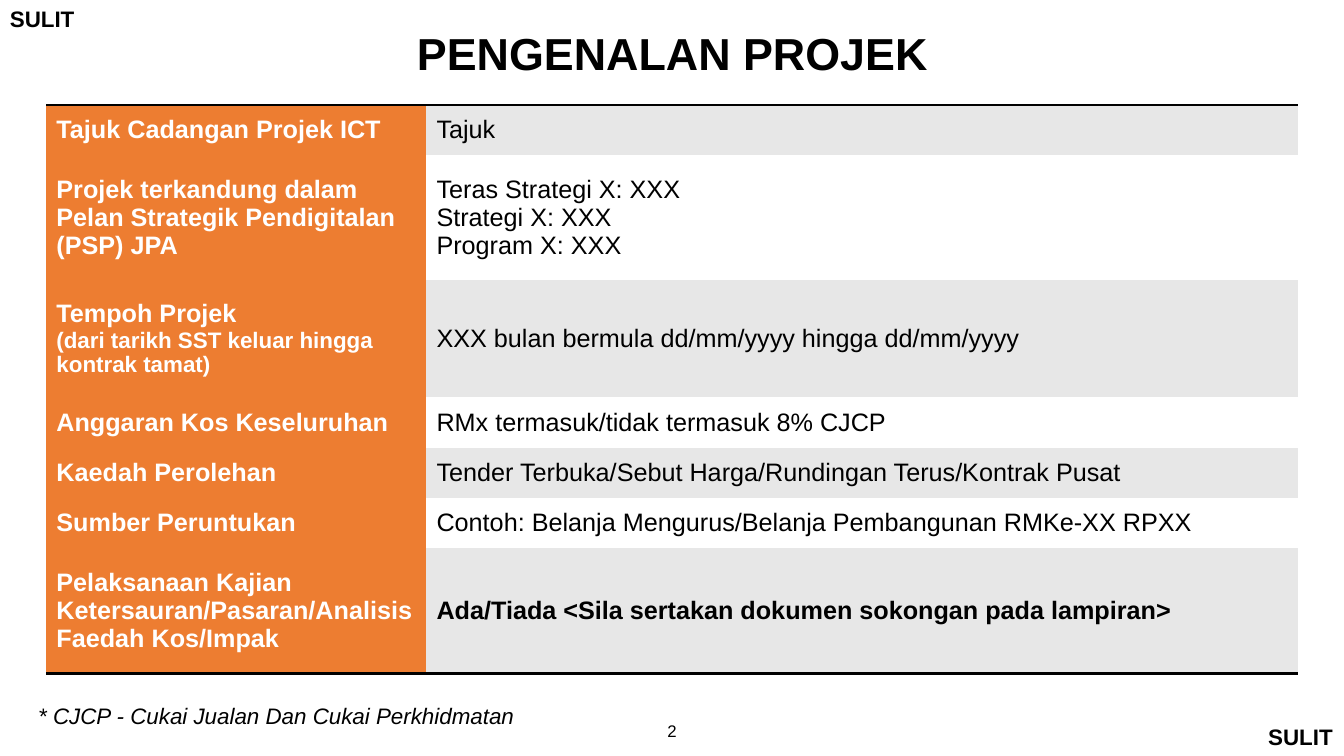
from lxml import etree
from pptx import Presentation
from pptx import util as u
from pptx.dml.color import RGBColor
from pptx.enum import text
from pptx.oxml import ns

BLACK = RGBColor(0x00, 0x00, 0x00)
WHITE = RGBColor(0xFF, 0xFF, 0xFF)
ORANGE = RGBColor(0xED, 0x7D, 0x31)
GREY = RGBColor(0xE7, 0xE7, 0xE7)
LEFT, CENTER, JUSTIFY = text.PP_ALIGN.LEFT, text.PP_ALIGN.CENTER, text.PP_ALIGN.JUSTIFY

COLS = [377, 864]
# Height, label lines, value lines
ROWS = [
    (50, ["Tajuk Cadangan Projek ICT"], ["Tajuk"]),
    (124, ["Projek terkandung dalam Pelan Strategik Pendigitalan (PSP) JPA"],
     ["Teras Strategi X: XXX", "Strategi X: XXX", "Program X: XXX"]),
    (116, ["Tempoh Projek", "(dari tarikh SST keluar hingga kontrak tamat)"],
     ["XXX bulan bermula dd/mm/yyyy hingga dd/mm/yyyy"]),
    (50, ["Anggaran Kos Keseluruhan"], ["RMx termasuk/tidak termasuk 8% CJCP"]),
    (50, ["Kaedah Perolehan"],
     ["Tender Terbuka/Sebut Harga/Rundingan Terus/Kontrak Pusat"]),
    (50, ["Sumber Peruntukan"],
     ["Contoh: Belanja Mengurus/Belanja Pembangunan RMKe-XX RPXX"]),
    (124, ["Pelaksanaan Kajian Ketersauran/Pasaran/Analisis Faedah Kos/Impak"],
     ["Ada/Tiada <Sila sertakan dokumen sokongan pada lampiran>"]),
]


class Deck:
    font = "Arial"
    scale = 9144  # EMU per px, 100 px to the inch

    def __init__(self, width, height):
        self.prs = Presentation()
        self.prs.slide_width, self.prs.slide_height = self.px(width), self.px(height)
        self.s = self.prs.slides.add_slide(self.prs.slide_layouts[6])

    def px(self, n):
        return u.Emu(n * self.scale)

    def style(self, p, size, color=BLACK, bold=False, italic=False, align=LEFT):
        p.alignment = align
        for r in p.runs:
            f = r.font
            f.name, f.size, f.bold, f.italic = self.font, u.Pt(size), bold, italic
            f.color.rgb = color

    def label(self, box, words, size, wrap=False, inset=(10, 5), **look):
        tf = self.s.shapes.add_textbox(*map(self.px, box)).text_frame
        tf.word_wrap = wrap
        tf.margin_left = tf.margin_right = self.px(inset[0])
        tf.margin_top = tf.margin_bottom = self.px(inset[1])
        tf.text = words
        self.style(tf.paragraphs[0], size, **look)

    def borders(self, cell, ruled):
        """Rule the named sides in black and leave the others without a line."""
        tcPr = cell._tc.get_or_add_tcPr()
        for side in "LRTB":
            ln = etree.SubElement(tcPr, ns.qn("a:ln" + side), w=str(u.Pt(2)))
            if side in ruled:
                fill = etree.SubElement(ln, ns.qn("a:solidFill"))
                etree.SubElement(fill, ns.qn("a:srgbClr"), val=str(BLACK))
            else:
                etree.SubElement(ln, ns.qn("a:noFill"))

    def cell(self, cell, lines, sizes, fill, ruled, **look):
        self.borders(cell, ruled)
        cell.fill.solid()
        cell.fill.fore_color.rgb = fill
        cell.vertical_anchor = text.MSO_ANCHOR.MIDDLE
        cell.text_frame.text = "\n".join(lines)
        for p, size in zip(cell.text_frame.paragraphs, sizes):
            self.style(p, size, **look)

    def table(self, left, top, cols, rows):
        box = (left, top, sum(cols), sum(row[0] for row in rows))
        tbl = self.s.shapes.add_table(len(rows), len(cols), *map(self.px, box)).table
        tbl.first_row = tbl.horz_banding = False
        for col, width in zip(tbl.columns, cols):
            col.width = self.px(width)
        last = len(rows) - 1
        for i, (height, name, value) in enumerate(rows):
            tbl.rows[i].height = self.px(height)
            ruled = {0: "T", last: "B"}.get(i, "")
            self.cell(tbl.cell(i, 0), name, (18, 16), ORANGE, ruled,
                      color=WHITE, bold=True)
            self.cell(tbl.cell(i, 1), value, (18, 18, 18), WHITE if i % 2 else GREY,
                      ruled, bold=i == last, align=JUSTIFY)


def main():
    deck = Deck(1333, 750)

    # Classification marks in opposite corners
    for left, top in ((0, 0), (1248, 713)):
        deck.label((left, top, 85, 37), "SULIT", 16, bold=True)

    # Project details
    deck.table(46, 104, COLS, ROWS)

    # Title, footnote and page number
    deck.label((404, 21, 526, 61), "PENGENALAN PROJEK", 32, inset=(7, 4),
               bold=True, align=CENTER)
    deck.label((28, 692, 505, 37), "* CJCP - Cukai Jualan Dan Cukai Perkhidmatan", 16,
               italic=True)
    deck.label((640, 710, 53, 40), "2", 12, wrap=True, align=CENTER)

    deck.prs.save("out.pptx")


if __name__ == "__main__":
    main()
